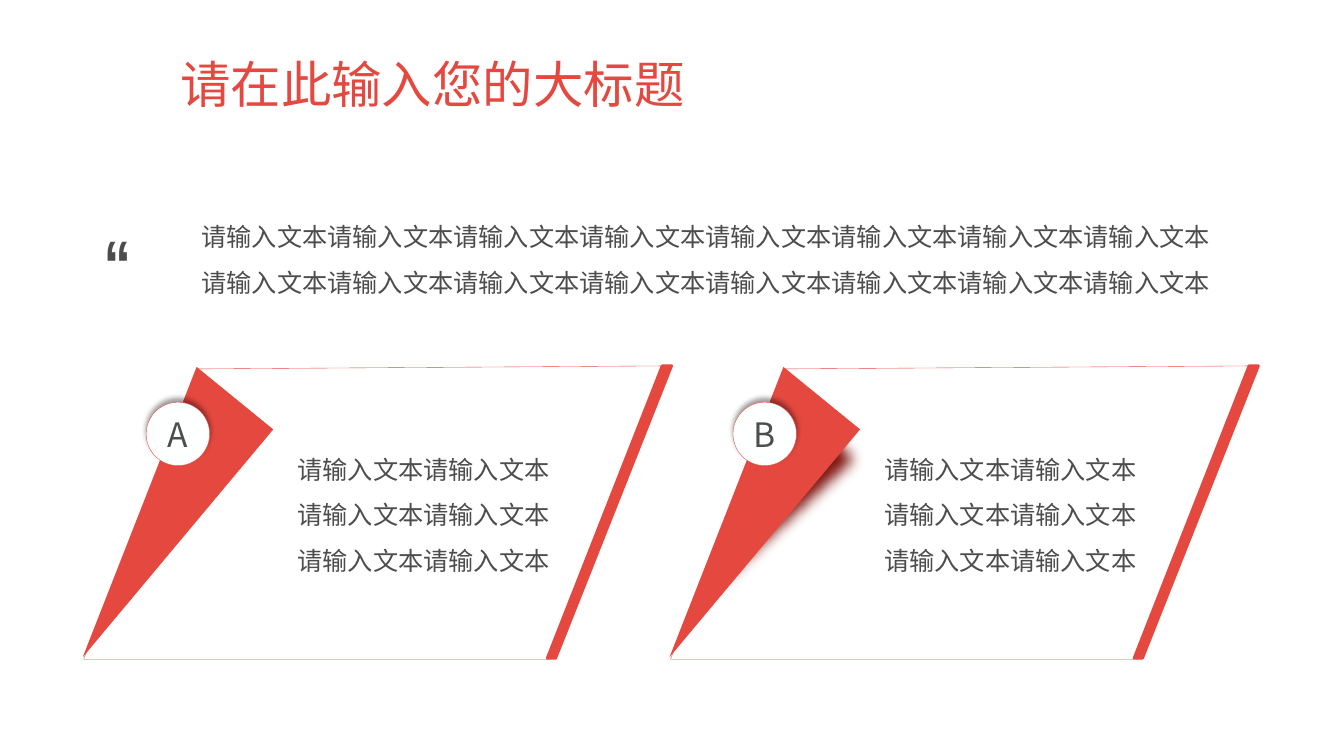
from lxml import etree
from pptx import Presentation, util as u
from pptx.dml.color import RGBColor
from pptx.enum import shapes, text
from pptx.oxml import ns

# Content
TITLE = "请在此输入您的大标题"
PHRASE = "请输入文本"
QUOTE_MARK = "“"
INTRO = PHRASE * 16
CARDS = [
    {"letter": "A", "body": PHRASE * 6, "fold_shadow": False},
    {"letter": "B", "body": PHRASE * 6, "fold_shadow": True},
]

# Style
RED = RGBColor(0xE5, 0x48, 0x3F)
DARK_RED = RGBColor(0x81, 0x17, 0x11)
GREY = RGBColor(0x4D, 0x4D, 0x4D)
BADGE_GREY = RGBColor(0x4C, 0x4D, 0x4D)
WHITE = RGBColor(0xFF, 0xFF, 0xFF)
BADGE_WHITE = RGBColor(0xFE, 0xFF, 0xFF)
CJK_FONT = "Noto Sans CJK SC"
QUOTE_FONT = "Arial Narrow"

# Geometry of the first card, in inches
CARD_STEP = 5.82
PANEL = [
    [(5.47, 6.51), (5.46, 6.54), (5.45, 6.54)],
    [(6.58, 3.63), (5.43, 6.54), (0.83, 6.54), (1.96, 3.66)],
]
FOLD = [[(1.95, 3.64), (2.71, 4.26), (0.82, 6.52)]]
FOLD_SHADOW = [[(0.88, 6.7), (1.13, 3.69), (2.09, 6.79)]]
FOLD_SHADOW_TURN = 222.4
STRIPE = [[(6.66, 3.63), (5.51, 6.53), (5.43, 6.53), (6.57, 3.63)]]
BADGE = (1.45, 3.99, 0.63, 0.63)
BODY = (2.82, 4.29, 2.76, 1.48)


def paint(shape, fill, line_width=None):
    shape.shadow.inherit = False
    shape.fill.solid()
    shape.fill.fore_color.rgb = fill
    if line_width is None:
        shape.line.fill.background()
    else:
        shape.line.color.rgb = RED
        shape.line.width = u.Pt(line_width)


def add_effect(shape, tag, **settings):
    effects = shape._element.spPr.find(ns.qn("a:effectLst"))
    return etree.SubElement(effects, ns.qn(tag), settings)


def add_outline(page, contours, shift, fill, line_width=None):
    moved = [[(u.Inches(x + shift), u.Inches(y)) for x, y in contour]
             for contour in contours]
    builder = page.shapes.build_freeform(*moved[0][0])
    for index, contour in enumerate(moved):
        if index:
            builder.move_to(*contour[0])
        builder.add_line_segments(contour[1:], close=True)
    shape = builder.convert_to_shape()
    paint(shape, fill, line_width)
    return shape


def write(shape, words, size, color, font=CJK_FONT, bold=False, spacing=None,
          align=text.PP_ALIGN.LEFT, anchor=text.MSO_ANCHOR.MIDDLE):
    frame = shape.text_frame
    frame.word_wrap = True
    frame.vertical_anchor = anchor
    para = frame.paragraphs[0]
    para.alignment = align
    if spacing:
        para.line_spacing = spacing
    span = para.add_run()
    span.text = words
    span.font.size = u.Pt(size)
    span.font.bold = bold
    span.font.color.rgb = color
    span.font.name = font
    etree.SubElement(span.font._element, ns.qn("a:ea"), typeface=font)


def add_text(page, place, words, size, color, **style):
    box = page.shapes.add_textbox(*map(u.Inches, place))
    write(box, words, size, color, **style)
    return box


def add_badge(page, letter, shift):
    left, top, width, height = BADGE
    badge = page.shapes.add_shape(
        shapes.MSO_SHAPE.OVAL,
        *map(u.Inches, (left + shift, top, width, height)))
    paint(badge, BADGE_WHITE, 0.25)
    shadow = add_effect(badge, "a:outerShdw", blurRad=str(u.Pt(4)),
                        dist=str(u.Pt(3)), dir=str(270 * 60000),
                        rotWithShape="0")
    color = etree.SubElement(shadow, ns.qn("a:srgbClr"), val="000000")
    etree.SubElement(color, ns.qn("a:alpha"), val="40000")
    frame = badge.text_frame
    frame.margin_left = frame.margin_right = 0
    frame.margin_top = frame.margin_bottom = 0
    write(badge, letter, 24, BADGE_GREY, align=text.PP_ALIGN.CENTER)


def add_card(page, card, shift):
    add_outline(page, PANEL, shift, WHITE, 0.25)
    if card["fold_shadow"]:
        glow = add_outline(page, FOLD_SHADOW, shift, DARK_RED)
        glow.rotation = FOLD_SHADOW_TURN
        add_effect(glow, "a:softEdge", rad=str(u.Pt(10)))
    add_outline(page, FOLD, shift, RED)
    add_outline(page, STRIPE, shift, RED, 2.25)
    add_badge(page, card["letter"], shift)
    left, top, width, height = BODY
    add_text(page, (left + shift, top, width, height), card["body"], 18, GREY,
             spacing=1.5, align=text.PP_ALIGN.CENTER)


def main():
    deck = Presentation()
    deck.slide_width, deck.slide_height = u.Inches(13.33), u.Inches(7.5)
    page = deck.slides.add_slide(deck.slide_layouts[6])

    # Heading
    add_text(page, (1.69, 0.4, 10.44, 0.93), TITLE, 36, RED, spacing=0.9)

    # Cards
    for index, card in enumerate(CARDS):
        add_card(page, card, index * CARD_STEP)

    # Introduction with its quote mark
    add_text(page, (1.9, 1.85, 10.34, 1.3), INTRO, 18, GREY, spacing=1.5)
    add_text(page, (0.93, 2.15, 0.7, 0.91), QUOTE_MARK, 48, GREY,
             font=QUOTE_FONT, bold=True, anchor=text.MSO_ANCHOR.TOP)

    deck.save("out.pptx")


if __name__ == "__main__":
    main()
